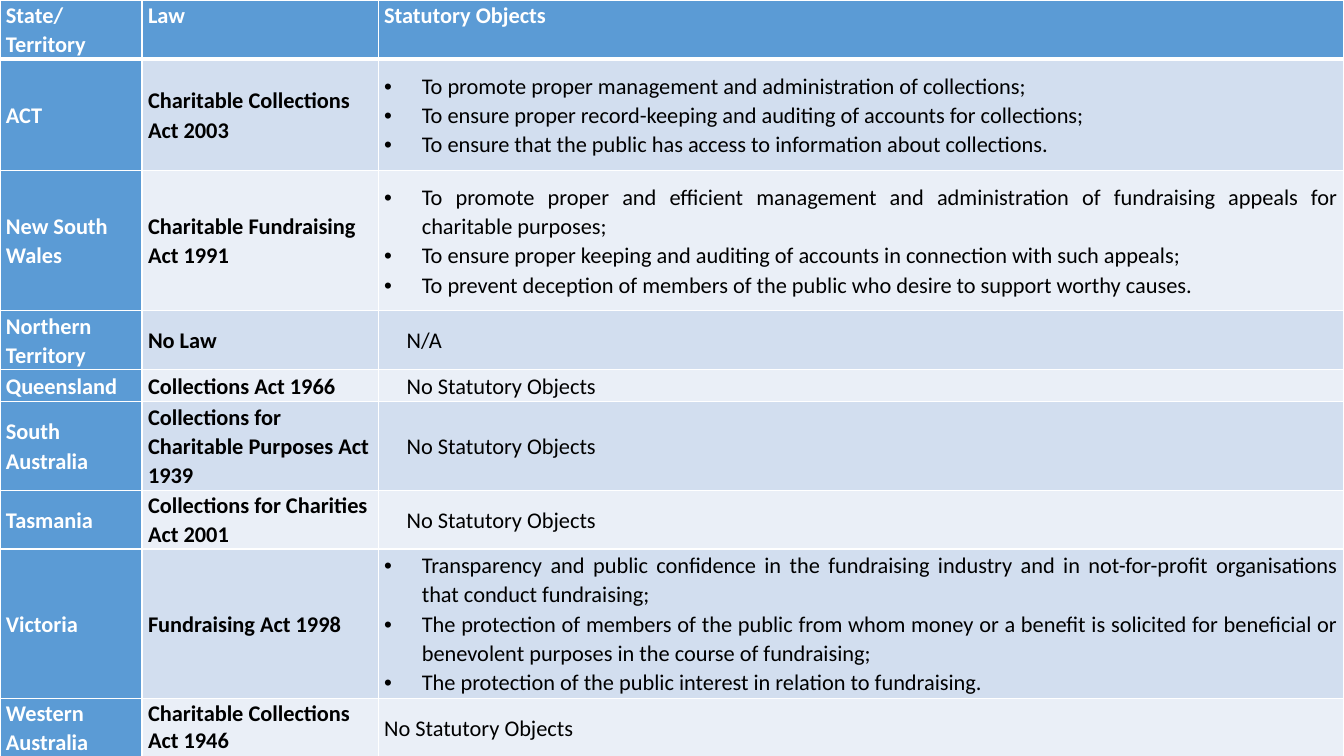
from collections import namedtuple

from lxml import etree
from pptx import Presentation
from pptx.dml.color import RGBColor
from pptx.enum.text import MSO_ANCHOR, PP_ALIGN
from pptx.oxml.ns import qn
from pptx.util import Cm, Pt

LEFT, JUSTIFY = PP_ALIGN.LEFT, PP_ALIGN.JUSTIFY
TOP, MIDDLE = MSO_ANCHOR.TOP, MSO_ANCHOR.MIDDLE

COLORS = {
    "header": "5B9BD5",
    "odd": "D2DEEF",
    "even": "EAEFF7",
    "light": "FFFFFF",
    "dark": "000000",
}
FONT = "Calibri"
SPACING = 1.07
OBJECT_INDENT = 0.57
BULLET_INDENT = 0.95
COLUMN_WIDTHS = (3.58, 5.95, 24.34)
HEADER_HEIGHT = 1.49
HEADINGS = ("State/\nTerritory", "Law", "Statutory Objects")

Jurisdiction = namedtuple(
    "Jurisdiction",
    "height state law objects indent law_spacing state_align",
    defaults=(OBJECT_INDENT, SPACING, LEFT),
)
NO_OBJECTS = ("No Statutory Objects",)
JURISDICTIONS = (
    Jurisdiction(2.81, "ACT", "Charitable Collections Act 2003", (
        "To promote proper management and administration of collections;",
        "To ensure proper record-keeping and auditing of accounts for collections;",
        "To ensure that the public has access to information about collections.",
    )),
    Jurisdiction(3.53, "New South Wales", "Charitable Fundraising Act 1991", (
        "To promote proper and efficient management and administration of "
        "fundraising appeals for charitable purposes;",
        "To ensure proper keeping and auditing of accounts in connection with such appeals;",
        "To prevent deception of members of the public who desire to support worthy causes.",
    )),
    Jurisdiction(1.47, "Northern Territory", "No Law", ("N/A",)),
    Jurisdiction(0.81, "Queensland", "Collections Act 1966", NO_OBJECTS),
    Jurisdiction(2.24, "South Australia",
                 "Collections for Charitable Purposes Act 1939", NO_OBJECTS),
    Jurisdiction(1.47, "Tasmania", "Collections for Charities Act 2001", NO_OBJECTS),
    Jurisdiction(3.76, "Victoria", "Fundraising Act 1998", (
        "Transparency and public confidence in the fundraising industry and in "
        "not-for-profit organisations that conduct fundraising;",
        "The protection of members of the public from whom money or a benefit is "
        "solicited for beneficial or benevolent purposes in the course of fundraising;",
        "The protection of the public interest in relation to fundraising.",
    )),
    Jurisdiction(1.47, "Western Australia", "Charitable Collections Act 1946",
                 NO_OBJECTS, 0, 1.0, JUSTIFY),
)


def set_borders(cell, top=1, bottom=1):
    properties = cell._tc.get_or_add_tcPr()
    sides = (("a:lnL", 1), ("a:lnR", 1), ("a:lnT", top), ("a:lnB", bottom))
    for position, (side, width) in enumerate(sides):
        border = etree.Element(qn(side), w=str(Pt(width)))
        fill = etree.SubElement(border, qn("a:solidFill"))
        etree.SubElement(fill, qn("a:srgbClr"), val=COLORS["light"])
        properties.insert(position, border)


def style_cell(cell, fill, anchor=MIDDLE, **borders):
    cell.margin_left = cell.margin_right = Cm(0.15)
    cell.margin_top = cell.margin_bottom = 0
    cell.vertical_anchor = anchor
    cell.fill.solid()
    cell.fill.fore_color.rgb = RGBColor.from_string(COLORS[fill])
    set_borders(cell, **borders)


def write_paragraph(paragraph, text, color, bold=True, align=LEFT,
                    spacing=SPACING, indent=0, bullet=False):
    paragraph.alignment = align
    paragraph.line_spacing = spacing
    properties = paragraph._p.get_or_add_pPr()
    properties.set("marL", str(Cm(indent) if bullet else 0))
    properties.set("indent", str(Cm(-indent if bullet else indent)))
    if bullet:
        etree.SubElement(properties, qn("a:buFont"), typeface="Arial")
        etree.SubElement(properties, qn("a:buChar"), char="•")
    for number, line in enumerate(text.split("\n")):
        if number:
            paragraph.add_line_break()
        run = paragraph.add_run()
        run.text = line
        run.font.name = FONT
        run.font.size = Pt(16)
        run.font.bold = bold
        run.font.color.rgb = RGBColor.from_string(COLORS[color])


def write_objects(frame, objects, indent):
    bullet = len(objects) > 1
    for number, statutory_object in enumerate(objects):
        paragraph = frame.add_paragraph() if number else frame.paragraphs[0]
        write_paragraph(paragraph, statutory_object, "dark", bold=False, align=JUSTIFY,
                        indent=BULLET_INDENT if bullet else indent, bullet=bullet)


def fill_header(cells):
    for cell, heading, align in zip(cells, HEADINGS, (LEFT, JUSTIFY, JUSTIFY)):
        style_cell(cell, "header", anchor=TOP, bottom=3)
        write_paragraph(cell.text_frame.paragraphs[0], heading, "light", align=align)


def fill_jurisdiction(cells, jurisdiction, number):
    state, law, objects = cells
    band = "odd" if number % 2 else "even"
    for cell, fill in ((state, "header"), (law, band), (objects, band)):
        style_cell(cell, fill, top=3 if number == 1 else 1)
    write_paragraph(state.text_frame.paragraphs[0], jurisdiction.state, "light",
                    align=jurisdiction.state_align)
    write_paragraph(law.text_frame.paragraphs[0], jurisdiction.law, "dark",
                    spacing=jurisdiction.law_spacing)
    write_objects(objects.text_frame, jurisdiction.objects, jurisdiction.indent)


def add_law_table(slide, left, top, width, height):
    laws = slide.shapes.add_table(
        len(JURISDICTIONS) + 1, len(HEADINGS), left, top, width, height).table
    laws.horz_banding = False
    for column, column_width in zip(laws.columns, COLUMN_WIDTHS):
        column.width = Cm(column_width)
    heights = [HEADER_HEIGHT] + [entry.height for entry in JURISDICTIONS]
    for row, row_height in zip(laws.rows, heights):
        row.height = Cm(row_height)
    header, *body = laws.rows
    fill_header(header.cells)
    for number, (row, jurisdiction) in enumerate(zip(body, JURISDICTIONS), 1):
        fill_jurisdiction(row.cells, jurisdiction, number)


def main():
    deck = Presentation()
    deck.slide_width, deck.slide_height = Cm(33.87), Cm(19.05)
    slide = deck.slides.add_slide(deck.slide_layouts[6])
    add_law_table(slide, 0, 0, deck.slide_width, deck.slide_height)
    deck.save("out.pptx")


if __name__ == "__main__":
    main()
